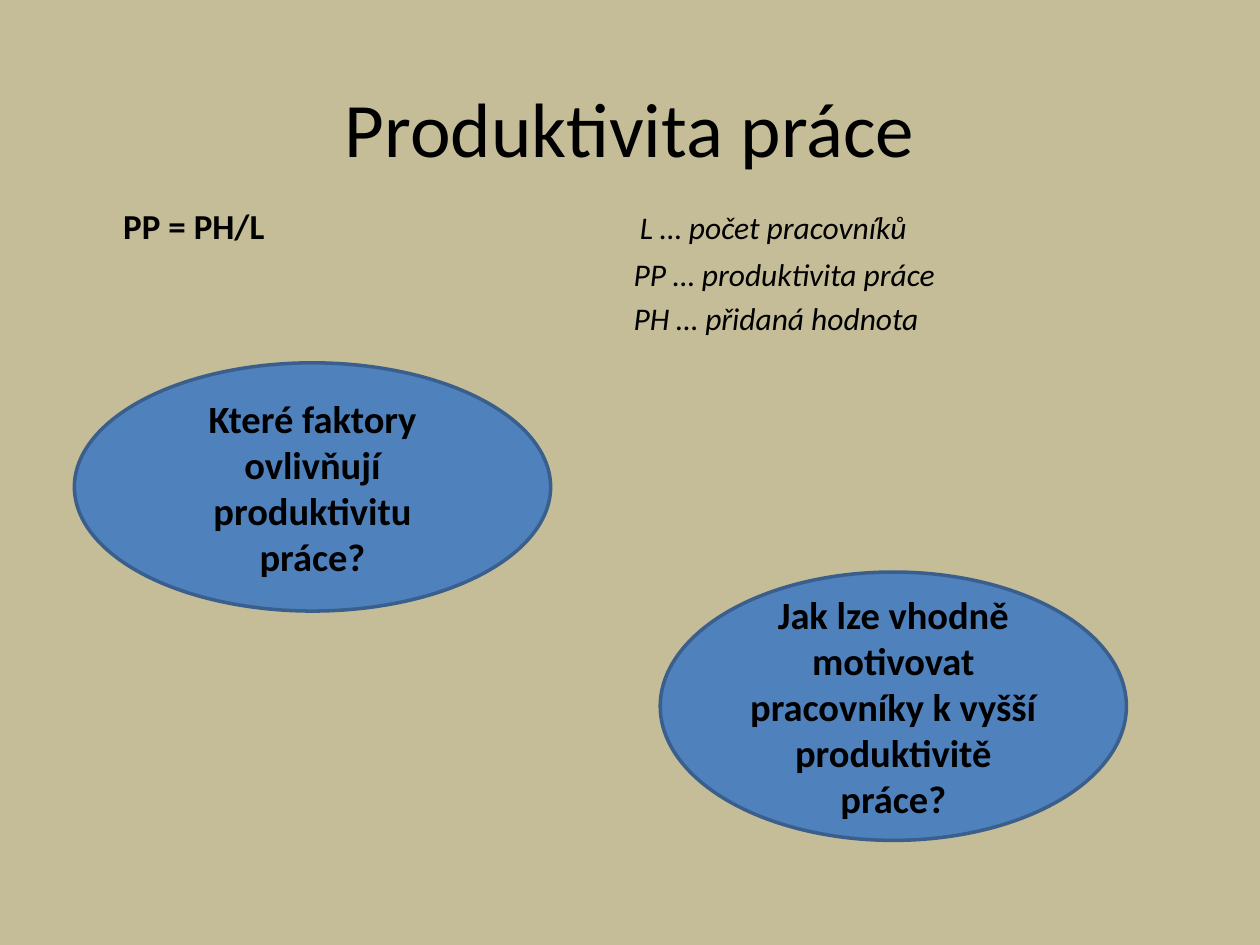
"""Build the slide on labour productivity."""
from lxml.etree import SubElement
from pptx import Presentation
from pptx.dml.color import RGBColor
from pptx.enum.shapes import MSO_SHAPE as Shape
from pptx.enum.text import MSO_ANCHOR as Anchor, PP_ALIGN as Align
from pptx.oxml.ns import qn
from pptx.util import Inches, Pt

BACKGROUND, BLACK, BLUE, DARK_BLUE = "C4BD97", "000000", "4F81BD", "3A5F8C"
FONT = "Calibri"

TITLE = ("Produktivita práce", (0.5, 0.38, 9, 1.25))
BODY_BOX = (0.5, 1.57, 9, 5.13)
FORMULA_FORMAT = {"size": Pt(20), "bold": True}
LEGEND_FORMAT = {"size": Pt(18), "italic": True}
BODY = [
    ((0.38, 4.48), 0, [("\tPP = PH/L", FORMULA_FORMAT),
                       ("\tL … počet pracovníků", LEGEND_FORMAT)]),
    ((4.43,), 4.9, [("\tPP … produktivita práce", LEGEND_FORMAT)]),
    ((4.43,), 3.6, [("\tPH … přidaná hodnota", LEGEND_FORMAT)]),
]
QUESTIONS = [
    ("Které faktory ovlivňují produktivitu práce?", (0.59, 2.88, 3.78, 1.97)),
    ("Jak lze vhodně motivovat pracovníky k vyšší produktivitě práce?",
     (5.24, 4.54, 3.7, 2.13)),
]


def paint(color_format, color):
    color_format.rgb = RGBColor.from_string(color)


def add_run(paragraph, text, values):
    run = paragraph.add_run()
    run.text = text
    for name, value in {"name": FONT, **values}.items():
        setattr(run.font, name, value)
    paint(run.font.color, BLACK)


def add_text_box(slide, box):
    frame = slide.shapes.add_textbox(*map(Inches, box)).text_frame
    frame.word_wrap = True
    return frame


def add_centred_text(frame, text, values):
    frame.word_wrap = True
    frame.vertical_anchor = Anchor.MIDDLE
    paragraph = frame.paragraphs[0]
    paragraph.alignment = Align.CENTER
    add_run(paragraph, text, values)


def add_tabs(paragraph, stops):
    tabs = SubElement(paragraph._p.get_or_add_pPr(), qn("a:tabLst"))
    for stop in stops:
        SubElement(tabs, qn("a:tab"), pos=str(Inches(stop)), algn="l")


def add_body(slide):
    frame = add_text_box(slide, BODY_BOX)
    for index, (stops, space, runs) in enumerate(BODY):
        paragraph = frame.add_paragraph() if index else frame.paragraphs[0]
        add_tabs(paragraph, stops)
        paragraph.space_before = Pt(space)
        for text, values in runs:
            add_run(paragraph, text, values)


def add_question(slide, text, box):
    shape = slide.shapes.add_shape(Shape.OVAL, *map(Inches, box))
    shape.shadow.inherit = False
    shape.fill.solid()
    paint(shape.fill.fore_color, BLUE)
    paint(shape.line.color, DARK_BLUE)
    shape.line.width = Pt(2)
    add_centred_text(shape.text_frame, text, {"size": Pt(22), "bold": True})


def main():
    presentation = Presentation()
    presentation.slide_width, presentation.slide_height = Inches(10), Inches(7.5)
    slide = presentation.slides.add_slide(presentation.slide_layouts[6])
    slide.background.fill.solid()
    paint(slide.background.fill.fore_color, BACKGROUND)
    title, title_box = TITLE
    add_centred_text(add_text_box(slide, title_box), title, {"size": Pt(44)})
    add_body(slide)
    for text, box in QUESTIONS:
        add_question(slide, text, box)
    presentation.save("out.pptx")


if __name__ == "__main__":
    main()
